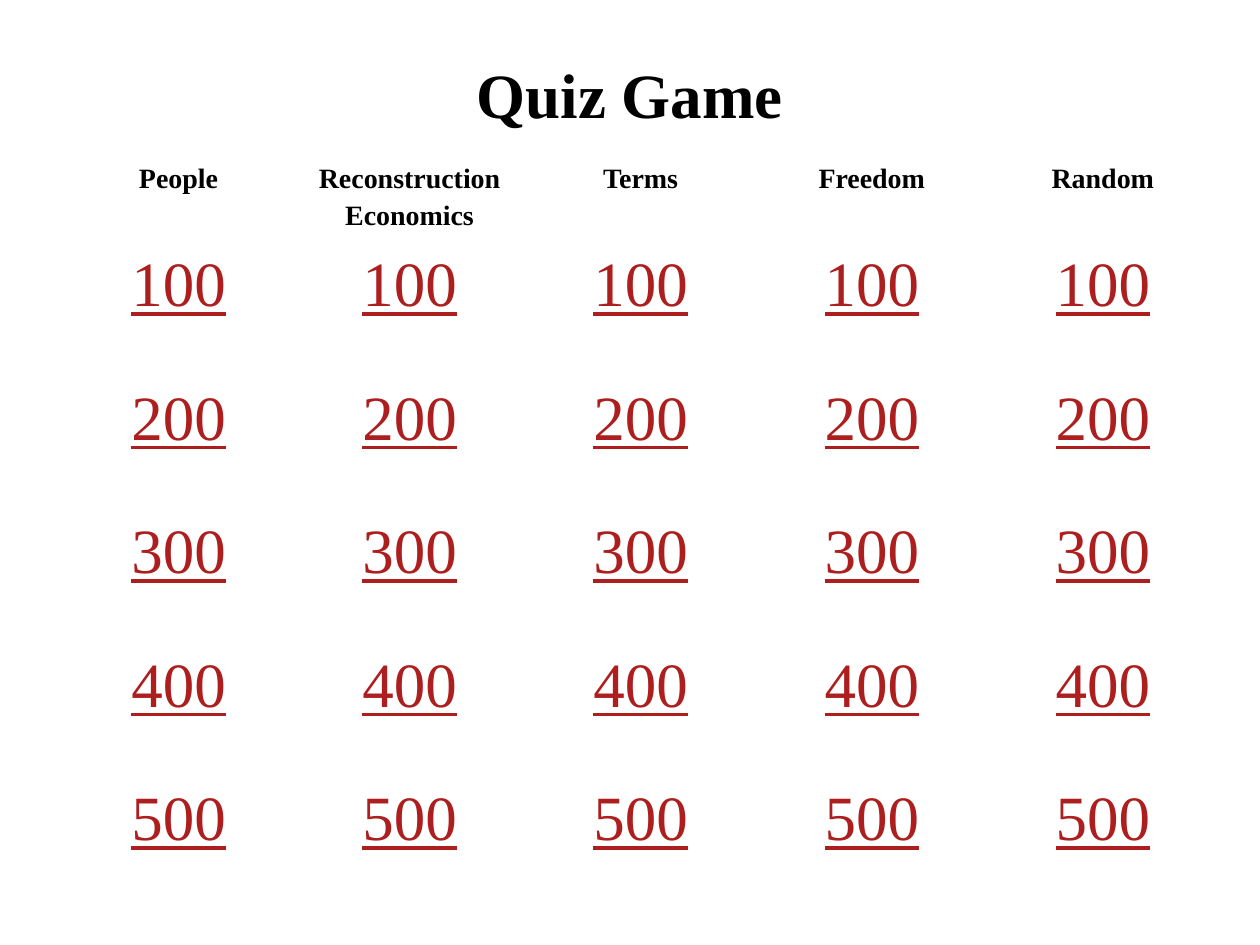
from lxml.etree import SubElement
from pptx import Presentation
from pptx.dml.color import RGBColor
from pptx.enum.text import MSO_ANCHOR, MSO_AUTO_SIZE, PP_ALIGN
from pptx.oxml.ns import qn
from pptx.util import Inches, Pt

BLACK = RGBColor(0x00, 0x00, 0x00)
RED = RGBColor(0xAD, 0x1F, 0x1F)
WHITE = RGBColor(0xFF, 0xFF, 0xFF)
FONT = "Times New Roman"
CATEGORIES = ["People", "Reconstruction\nEconomics", "Terms", "Freedom", "Random"]
POINTS = [100, 200, 300, 400, 500]


def format_paragraph(paragraph, size, color, bold=False, underline=False):
    """Centre a paragraph and set its font."""
    paragraph.alignment = PP_ALIGN.CENTER
    font = paragraph.font
    font.name, font.size, font.bold = FONT, Pt(size), bold
    font.underline = underline
    font.color.rgb = color


def add_title(slide, text):
    """Place and format the slide title."""
    title = slide.shapes.title
    title.left, title.top = Inches(0), Inches(0.33)
    title.width, title.height = Inches(10), Inches(0.71)
    frame = title.text_frame
    frame.text = text
    frame.word_wrap = True
    frame.auto_size = MSO_AUTO_SIZE.NONE
    frame.vertical_anchor = MSO_ANCHOR.TOP
    frame.margin_top, frame.margin_bottom = Inches(0.11), Inches(0)
    format_paragraph(frame.paragraphs[0], 36, BLACK, bold=True)


def set_borders(cell):
    """Give a cell a thin white line on each side."""
    properties = cell._tc.get_or_add_tcPr()
    for position, side in enumerate(("a:lnL", "a:lnR", "a:lnT", "a:lnB")):
        line = SubElement(properties, qn(side), w=str(Pt(1)))
        fill = SubElement(line, qn("a:solidFill"))
        SubElement(fill, qn("a:srgbClr"), val=str(WHITE))
        properties.insert(position, line)


def fill_cell(cell, text, size, color, **style):
    """Write a cell's lines without a background."""
    cell.text = text
    cell.fill.background()
    set_borders(cell)
    for index, paragraph in enumerate(cell.text_frame.paragraphs):
        format_paragraph(paragraph, size, color, **style)
        if index:
            paragraph.space_before = Pt(size * 0.2)


def add_board(slide):
    """Add the grid of categories and point values."""
    board = slide.shapes.add_table(
        len(POINTS) + 1, len(CATEGORIES),
        Inches(0.5), Inches(1.25), Inches(9.17), Inches(5.99),
    ).table
    board.first_row = board.horz_banding = False
    board.rows[0].height = Inches(0.69)
    for column, category in enumerate(CATEGORIES):
        board.columns[column].width = Inches(9.17 / len(CATEGORIES))
        fill_cell(board.cell(0, column), category, 16, BLACK, bold=True)
    for row, points in enumerate(POINTS, start=1):
        board.rows[row].height = Inches(1.06)
        for column in range(len(CATEGORIES)):
            fill_cell(board.cell(row, column), str(points), 36, RED, underline=True)


def main():
    """Build and save the quiz board slide."""
    presentation = Presentation()
    presentation.slide_width, presentation.slide_height = Inches(10), Inches(7.5)
    slide = presentation.slides.add_slide(presentation.slide_layouts[5])
    add_title(slide, "Quiz Game")
    add_board(slide)
    presentation.save("out.pptx")


if __name__ == "__main__":
    main()
